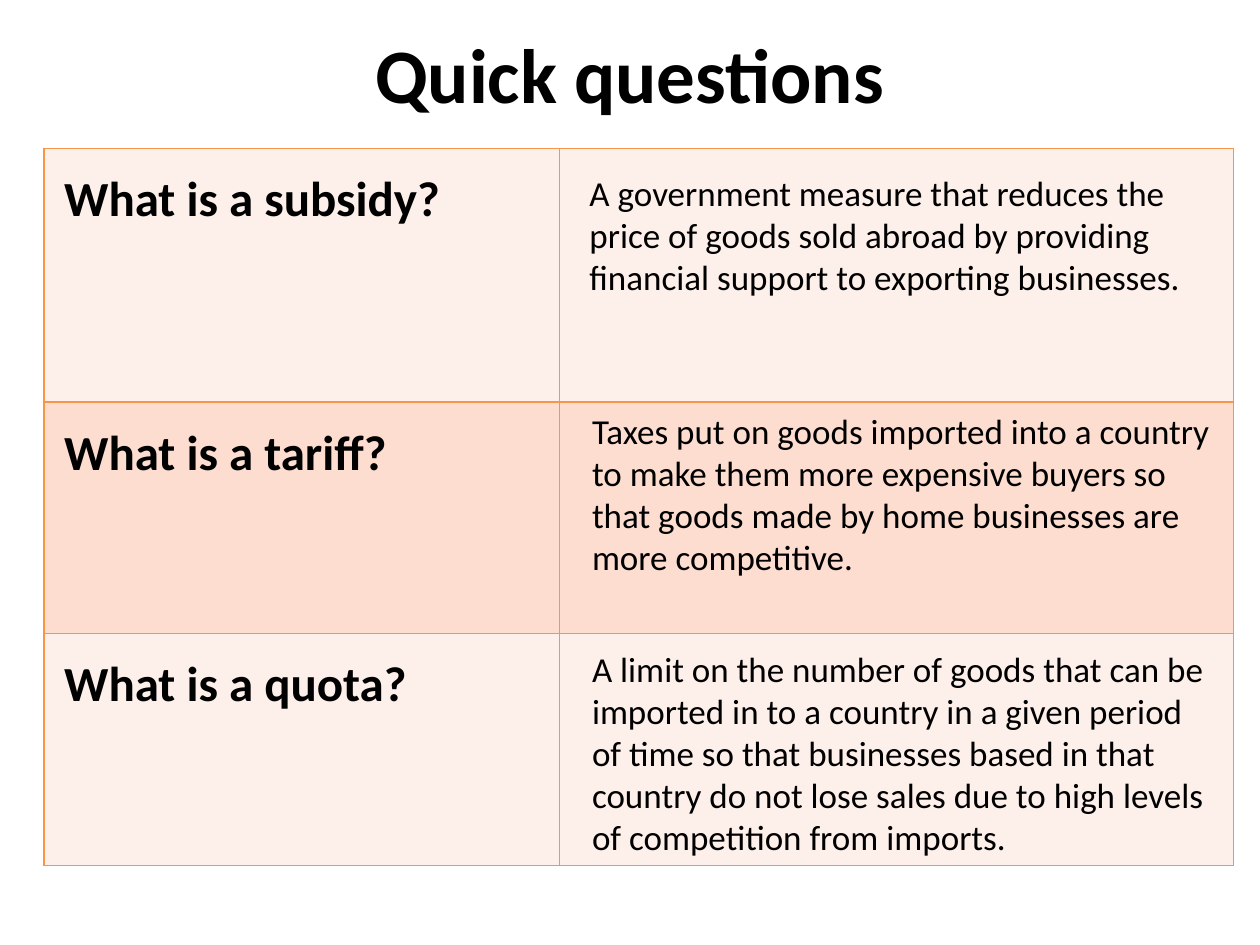
from lxml.etree import SubElement
from pptx import Presentation
from pptx.dml.color import RGBColor
from pptx.enum.text import MSO_AUTO_SIZE, PP_ALIGN
from pptx.oxml.ns import qn
from pptx.util import Inches, Pt

BLACK = RGBColor(0x00, 0x00, 0x00)
ORANGE = RGBColor(0xF7, 0x96, 0x46)
PALE = RGBColor(0xFD, 0xEF, 0xE9)
PEACH = RGBColor(0xFC, 0xDD, 0xCF)

COLS = [4.09, 5.35]
ROWS = [2.01, 1.84, 1.84]
TERMS = ["What is a subsidy?", "What is a tariff?", "What is a quota?"]
ANSWERS = [
    (4.58, 1.31, 1.11,
     "A government measure that reduces the price of goods sold abroad by "
     "providing financial support to exporting businesses."),
    (4.6, 3.2, 1.45,
     "Taxes put on goods imported into a country to make them more expensive "
     "buyers so that goods made by home businesses are more competitive."),
    (4.6, 5.09, 1.78,
     "A limit on the number of goods that can be imported in to a country in "
     "a given period of time so that businesses based in that country do not "
     "lose sales due to high levels of competition from imports."),
]


class Page:
    font = "Calibri"
    color = BLACK
    edge = ORANGE

    def __init__(self, slide):
        self.slide = slide

    def style(self, para, size, bold=False):
        para.font.name = self.font
        para.font.size = Pt(size)
        para.font.bold = bold
        para.font.color.rgb = self.color

    def text(self, words, left, top, width, height, size, bold=False,
             align=PP_ALIGN.LEFT, fit=MSO_AUTO_SIZE.NONE):
        box = self.slide.shapes.add_textbox(
            Inches(left), Inches(top), Inches(width), Inches(height))
        frame = box.text_frame
        frame.word_wrap = True
        frame.auto_size = fit
        para = frame.paragraphs[0]
        para.text = words
        para.alignment = align
        self.style(para, size, bold)

    def border(self, cell):
        """Draw a one point line on all four sides of the cell."""
        props = cell._tc.get_or_add_tcPr()
        for index, side in enumerate(("lnL", "lnR", "lnT", "lnB")):
            line = SubElement(props, qn(f"a:{side}"), w=str(Pt(1)))
            fill = SubElement(line, qn("a:solidFill"))
            SubElement(fill, qn("a:srgbClr"), val=str(self.edge))
            props.insert(index, line)

    def table(self, terms, left, top, cols, rows, fills):
        """Put the terms in the first column and leave the others open."""
        table = self.slide.shapes.add_table(
            len(rows), len(cols), Inches(left), Inches(top),
            Inches(sum(cols)), Inches(sum(rows))).table
        table.first_row = table.horz_banding = False
        for col, width in zip(table.columns, cols):
            col.width = Inches(width)
        for index, (row, height) in enumerate(zip(table.rows, rows)):
            row.height = Inches(height)
            for cell in row.cells:
                cell.fill.solid()
                cell.fill.fore_color.rgb = fills[index % len(fills)]
                self.border(cell)
            self.term(row.cells[0], terms[index])

    def term(self, cell, words):
        cell.margin_left = Inches(0.16)
        cell.margin_right = Inches(0.08)
        cell.margin_top = cell.margin_bottom = Inches(0.1)
        para = cell.text_frame.paragraphs[0]
        para.text = words
        para.line_spacing = 1.15
        self.style(para, 28, bold=True)


def main():
    deck = Presentation()
    deck.slide_width = Inches(10)
    deck.slide_height = Inches(7.5)
    page = Page(deck.slides.add_slide(deck.slide_layouts[6]))
    page.text("Quick questions", 0.5, 0.16, 9, 1.03, 44, bold=True,
              align=PP_ALIGN.CENTER)
    page.table(TERMS, 0.35, 1.18, COLS, ROWS, [PALE, PEACH])
    for left, top, height, words in ANSWERS:
        page.text(words, left, top, 5.12, height, 20,
                  fit=MSO_AUTO_SIZE.SHAPE_TO_FIT_TEXT)
    deck.save("out.pptx")


if __name__ == "__main__":
    main()
